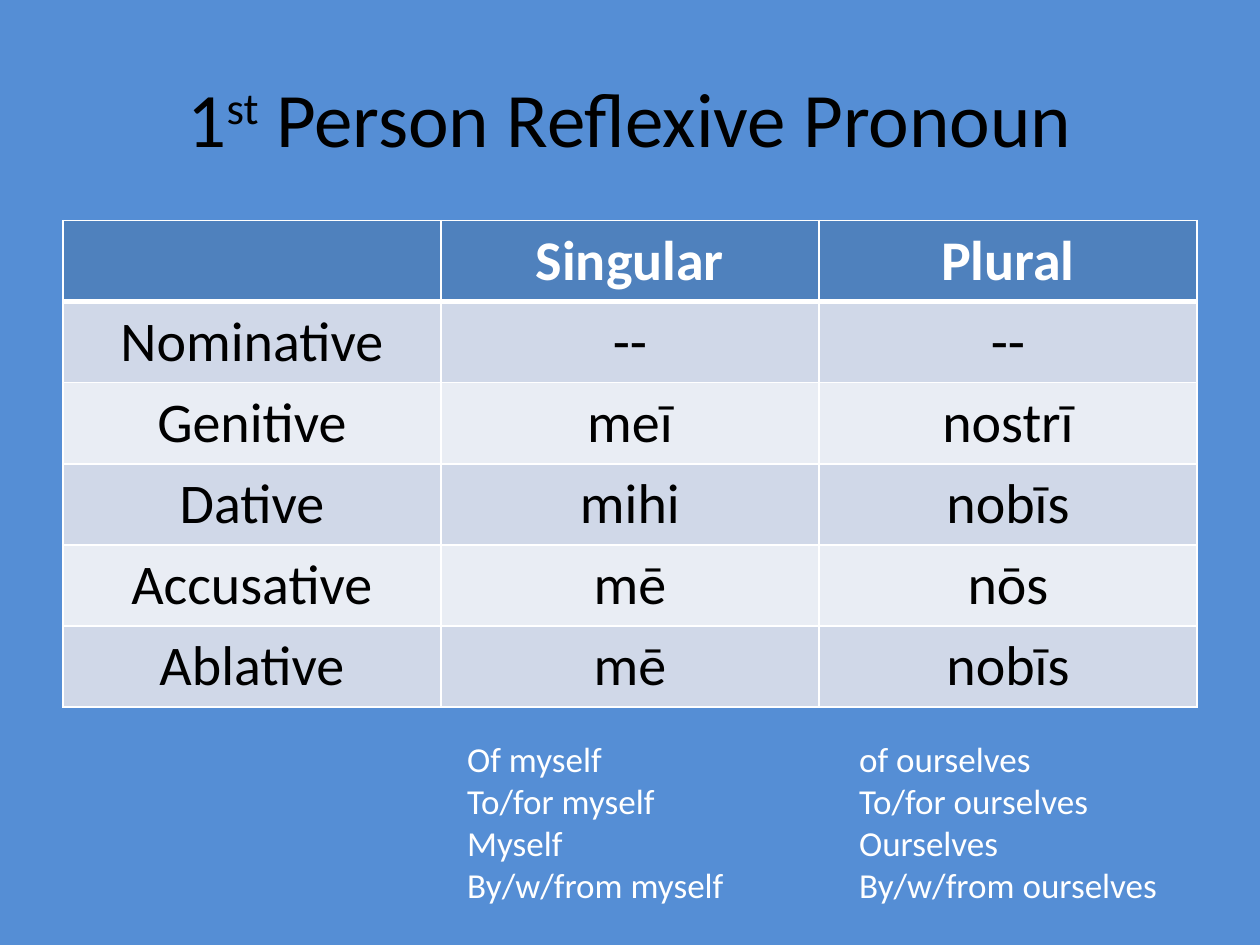
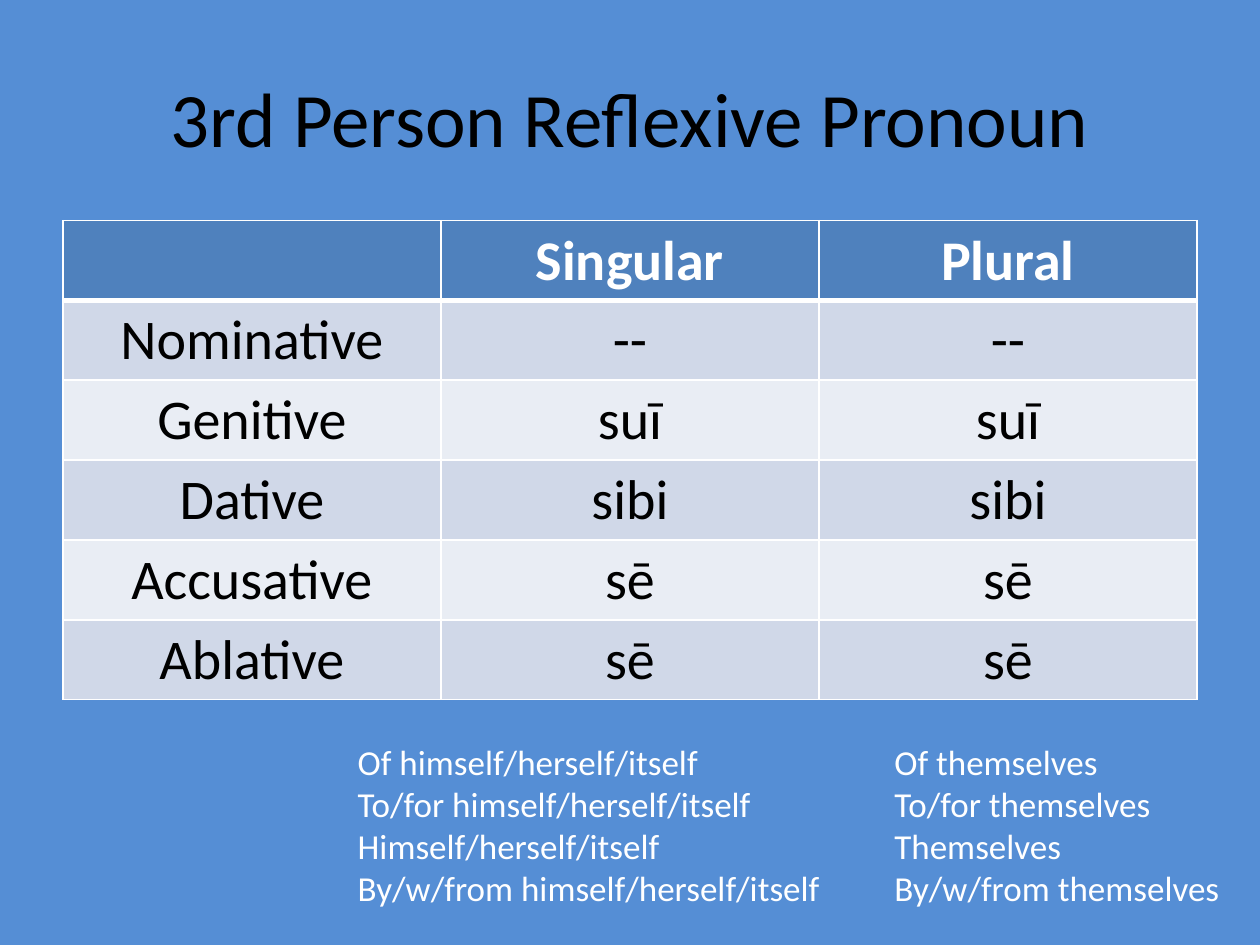
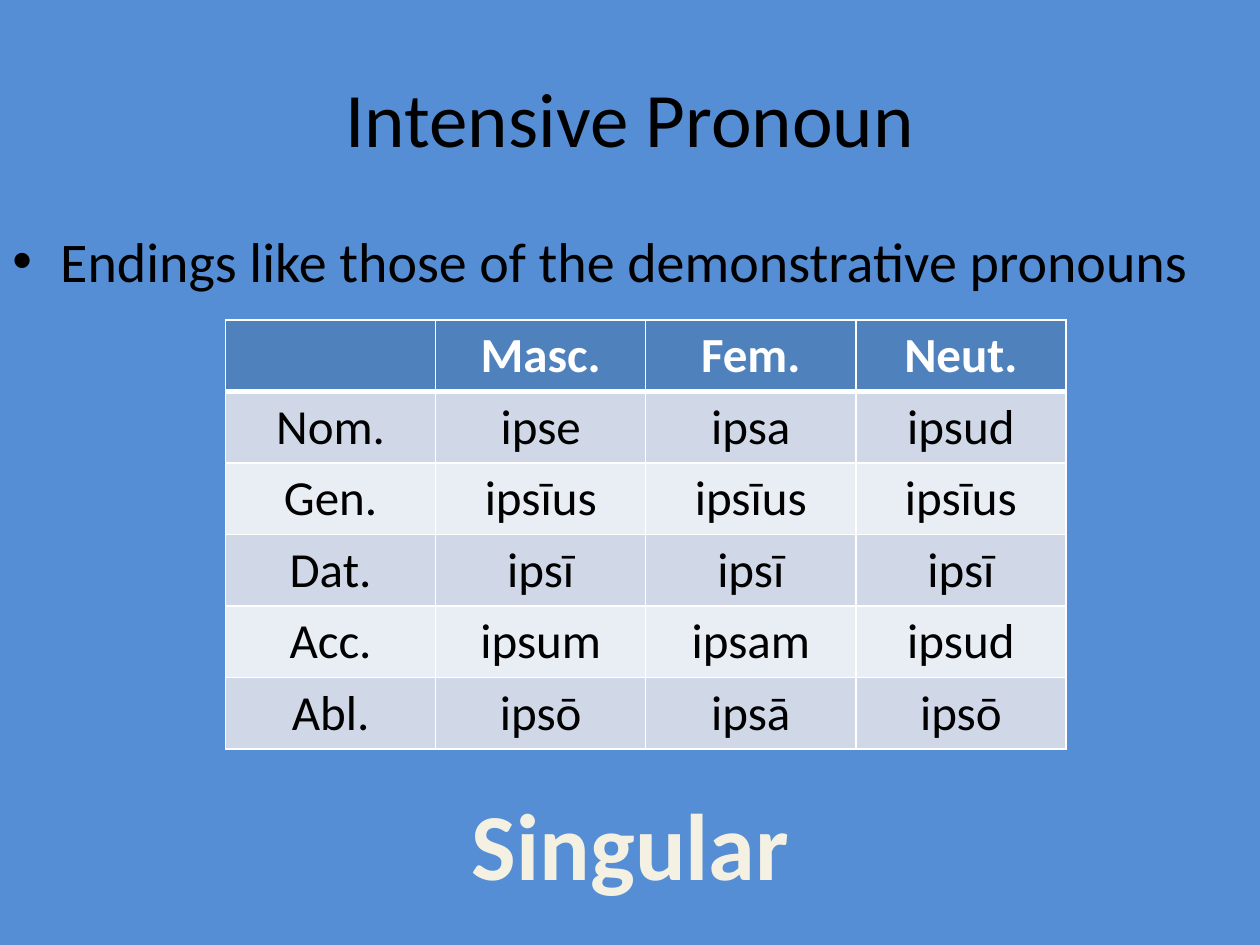
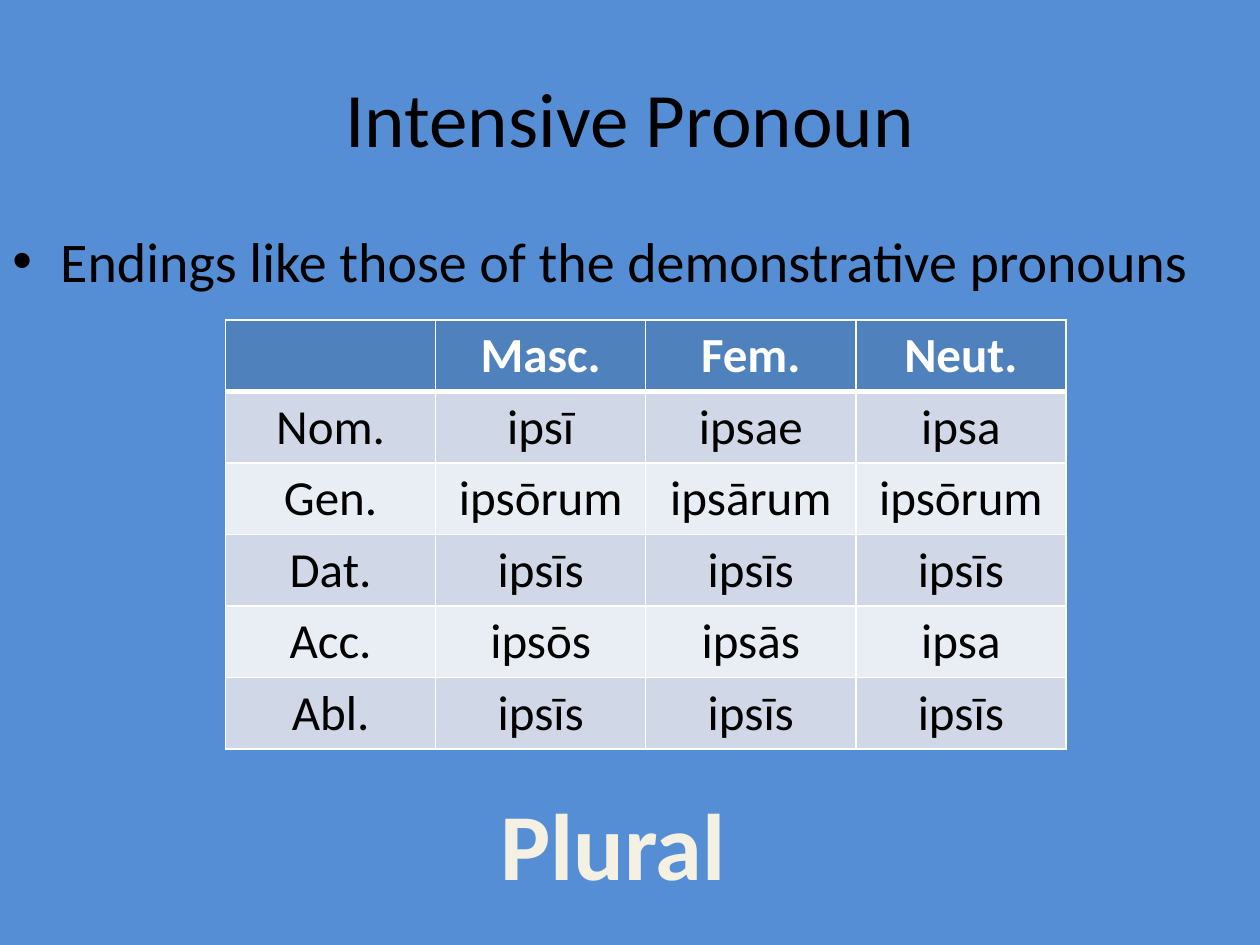
from dataclasses import dataclass
from typing import Any, NamedTuple

from lxml import etree
from pptx import Presentation
from pptx import util as u
from pptx.dml.color import RGBColor
from pptx.enum import text
from pptx.oxml import ns


# Theme: every colour and type size
@dataclass(frozen=True)
class Theme:
    font: str = "Calibri"
    background: str = "558ED5"
    ink: str = "000000"
    white: str = "FFFFFF"
    header: str = "4F81BD"
    bands: tuple[str, str] = ("D0D8E8", "E9EDF4")
    number_fill: str = "F4F1E3"
    number_outline: str = "054697"
    title_size: int = 44
    body_size: int = 32
    small_table_size: int = 28
    meaning_size: int = 20
    number_size: int = 54


THEME = Theme()

# Grid: 100 columns by 75 rows over the slide
WIDTH, HEIGHT = u.Inches(10), u.Inches(7.5)
COLUMN, ROW = WIDTH / 100, HEIGHT / 75


class Area(NamedTuple):
    column: float
    row: float
    columns: float
    rows: float

    def lengths(self) -> tuple[int, int, int, int]:
        return (round(self.column * COLUMN), round(self.row * ROW),
                round(self.columns * COLUMN), round(self.rows * ROW))


class Meanings(NamedTuple):
    area: Area
    lines: list[str]


class ReflexiveSlide(NamedTuple):
    title: list[str]  # every second part is raised
    forms: list[list[str]]
    meanings: list[Meanings]


class IntensiveSlide(NamedTuple):
    number: str
    number_area: Area
    forms: list[list[str]]


TITLE_AREA = Area(5, 3, 90, 12.5)
REFLEXIVE_AREA = Area(5, 17.5, 90, 38)
RULE_AREA = Area(0, 17.5, 100, 49.5)
INTENSIVE_AREA = Area(17.9, 25.4, 66.7, 34)

REFLEXIVE_HEADS = ["", "Singular", "Plural"]
REFLEXIVE_CASES = ["Nominative", "Genitive", "Dative", "Accusative", "Ablative"]
INTENSIVE_HEADS = ["", "Masc.", "Fem.", "Neut."]
INTENSIVE_CASES = ["Nom.", "Gen.", "Dat.", "Acc.", "Abl."]
INTENSIVE_TITLE = ["Intensive Pronoun"]
ENDINGS_RULE = "Endings like those of the demonstrative pronouns"

REFLEXIVES = [
    ReflexiveSlide(
        ["1", "st", " Person Reflexive Pronoun"],
        [["--", "--"], ["meī", "nostrī"], ["mihi", "nobīs"], ["mē", "nōs"], ["mē", "nobīs"]],
        [Meanings(Area(36.1, 58, 26.4, 14.5),
                  ["Of myself", "To/for myself", "Myself", "By/w/from myself"]),
         Meanings(Area(67.2, 58, 26, 14.5),
                  ["of ourselves", "To/for ourselves", "Ourselves", "By/w/from ourselves"])]),
    ReflexiveSlide(
        ["3rd Person Reflexive Pronoun"],
        [[form, form] for form in ("--", "suī", "sibi", "sē", "sē")],
        [Meanings(Area(27.4, 58.3, 40.8, 14.5),
                  ["Of himself/herself/itself", "To/for himself/herself/itself",
                   "Himself/herself/itself", "By/w/from himself/herself/itself"]),
         Meanings(Area(70, 58.3, 30, 14.5),
                  ["Of themselves", "To/for themselves", "Themselves",
                   "By/w/from themselves"])]),
]

INTENSIVES = [
    IntensiveSlide("Singular", Area(36.3, 61.9, 27.5, 10.1), [
        ["ipse", "ipsa", "ipsud"], ["ipsīus"] * 3, ["ipsī"] * 3,
        ["ipsum", "ipsam", "ipsud"], ["ipsō", "ipsā", "ipsō"]]),
    IntensiveSlide("Plural", Area(38.5, 61.9, 20.3, 10.1), [
        ["ipsī", "ipsae", "ipsa"], ["ipsōrum", "ipsārum", "ipsōrum"], ["ipsīs"] * 3,
        ["ipsōs", "ipsās", "ipsa"], ["ipsīs"] * 3]),
]


# Text helpers
def apply(target: Any, formats: dict[str, Any]) -> None:
    for name, value in formats.items():
        setattr(target, name, value)


def add_run(paragraph: Any, words: str, size: int, color: str, bold: bool = False) -> Any:
    run = paragraph.add_run()
    run.text = words
    apply(run.font, {"name": THEME.font, "size": u.Pt(size), "bold": bold})
    run.font.color.rgb = RGBColor.from_string(color)
    return run


def add_frame(slide: Any, area: Area, **formats: Any) -> Any:
    frame = slide.shapes.add_textbox(*area.lengths()).text_frame
    apply(frame, {"word_wrap": True, "auto_size": text.MSO_AUTO_SIZE.NONE, **formats})
    return frame


def add_line(parent: Any, tag: str, color: str, points: float) -> Any:
    line = etree.SubElement(parent, ns.qn(tag), w=str(u.Pt(points)))
    fill = etree.SubElement(line, ns.qn("a:solidFill"))
    etree.SubElement(fill, ns.qn("a:srgbClr"), val=color)
    return line


# Slide parts
def add_title(slide: Any, parts: list[str]) -> None:
    frame = add_frame(slide, TITLE_AREA, vertical_anchor=text.MSO_ANCHOR.MIDDLE)
    paragraph = frame.paragraphs[0]
    paragraph.alignment = text.PP_ALIGN.CENTER
    for index, part in enumerate(parts):
        run = add_run(paragraph, part, THEME.title_size, THEME.ink)
        if index % 2:
            run._r.get_or_add_rPr().set("baseline", "30000")


def add_rule(slide: Any, words: str) -> None:
    paragraph = add_frame(slide, RULE_AREA).paragraphs[0]
    paragraph.space_before = u.Pt(THEME.body_size * 0.2)
    add_run(paragraph, words, THEME.body_size, THEME.ink)
    properties = paragraph._p.get_or_add_pPr()
    hang = u.Inches(0.38)
    properties.set("marL", str(hang))
    properties.set("indent", str(-hang))
    etree.SubElement(properties, ns.qn("a:buFont"), typeface="Arial")
    etree.SubElement(properties, ns.qn("a:buChar"), char="•")


def add_declension(slide: Any, area: Area, size: int, heads: list[str],
                   cases: list[str], forms: list[list[str]]) -> None:
    rows = [heads] + [[case, *row] for case, row in zip(cases, forms)]
    table = slide.shapes.add_table(len(rows), len(heads), *area.lengths()).table
    for r, row in enumerate(rows):
        is_head = r == 0
        fill = THEME.header if is_head else THEME.bands[(r - 1) % 2]
        color = THEME.white if is_head else THEME.ink
        borders = {"a:lnL": 1, "a:lnR": 1, "a:lnT": 3 if r == 1 else 1,
                   "a:lnB": 3 if is_head else 1}
        for c, words in enumerate(row):
            cell = table.cell(r, c)
            for side, points in borders.items():
                add_line(cell._tc.get_or_add_tcPr(), side, THEME.white, points)
            cell.fill.solid()
            cell.fill.fore_color.rgb = RGBColor.from_string(fill)
            paragraph = cell.text_frame.paragraphs[0]
            paragraph.alignment = text.PP_ALIGN.CENTER
            if words:
                add_run(paragraph, words, size, color, bold=is_head)


def add_meanings(slide: Any, meanings: Meanings) -> None:
    frame = add_frame(slide, meanings.area, auto_size=text.MSO_AUTO_SIZE.SHAPE_TO_FIT_TEXT)
    for index, line in enumerate(meanings.lines):
        paragraph = frame.add_paragraph() if index else frame.paragraphs[0]
        add_run(paragraph, line, THEME.meaning_size, THEME.white)


def add_number(slide: Any, area: Area, words: str) -> None:
    frame = add_frame(slide, area, word_wrap=False,
                      auto_size=text.MSO_AUTO_SIZE.SHAPE_TO_FIT_TEXT)
    paragraph = frame.paragraphs[0]
    paragraph.alignment = text.PP_ALIGN.CENTER
    run = add_run(paragraph, words, THEME.number_size, THEME.number_fill, bold=True)
    properties = run._r.get_or_add_rPr()
    # The outline has to come before the fill
    properties.insert(0, add_line(properties, "a:ln", THEME.number_outline, 1))


def main() -> None:
    deck = Presentation()
    apply(deck, {"slide_width": WIDTH, "slide_height": HEIGHT})
    background = deck.slide_master.background.fill
    background.solid()
    background.fore_color.rgb = RGBColor.from_string(THEME.background)
    blank = deck.slide_layouts[6]

    # Reflexive pronouns
    for reflexive in REFLEXIVES:
        slide = deck.slides.add_slide(blank)
        add_title(slide, reflexive.title)
        add_declension(slide, REFLEXIVE_AREA, THEME.body_size,
                       REFLEXIVE_HEADS, REFLEXIVE_CASES, reflexive.forms)
        for meanings in reflexive.meanings:
            add_meanings(slide, meanings)

    # Intensive pronouns
    for intensive in INTENSIVES:
        slide = deck.slides.add_slide(blank)
        add_title(slide, INTENSIVE_TITLE)
        add_rule(slide, ENDINGS_RULE)
        add_declension(slide, INTENSIVE_AREA, THEME.small_table_size,
                       INTENSIVE_HEADS, INTENSIVE_CASES, intensive.forms)
        add_number(slide, intensive.number_area, intensive.number)

    deck.save("out.pptx")


if __name__ == "__main__":
    main()
